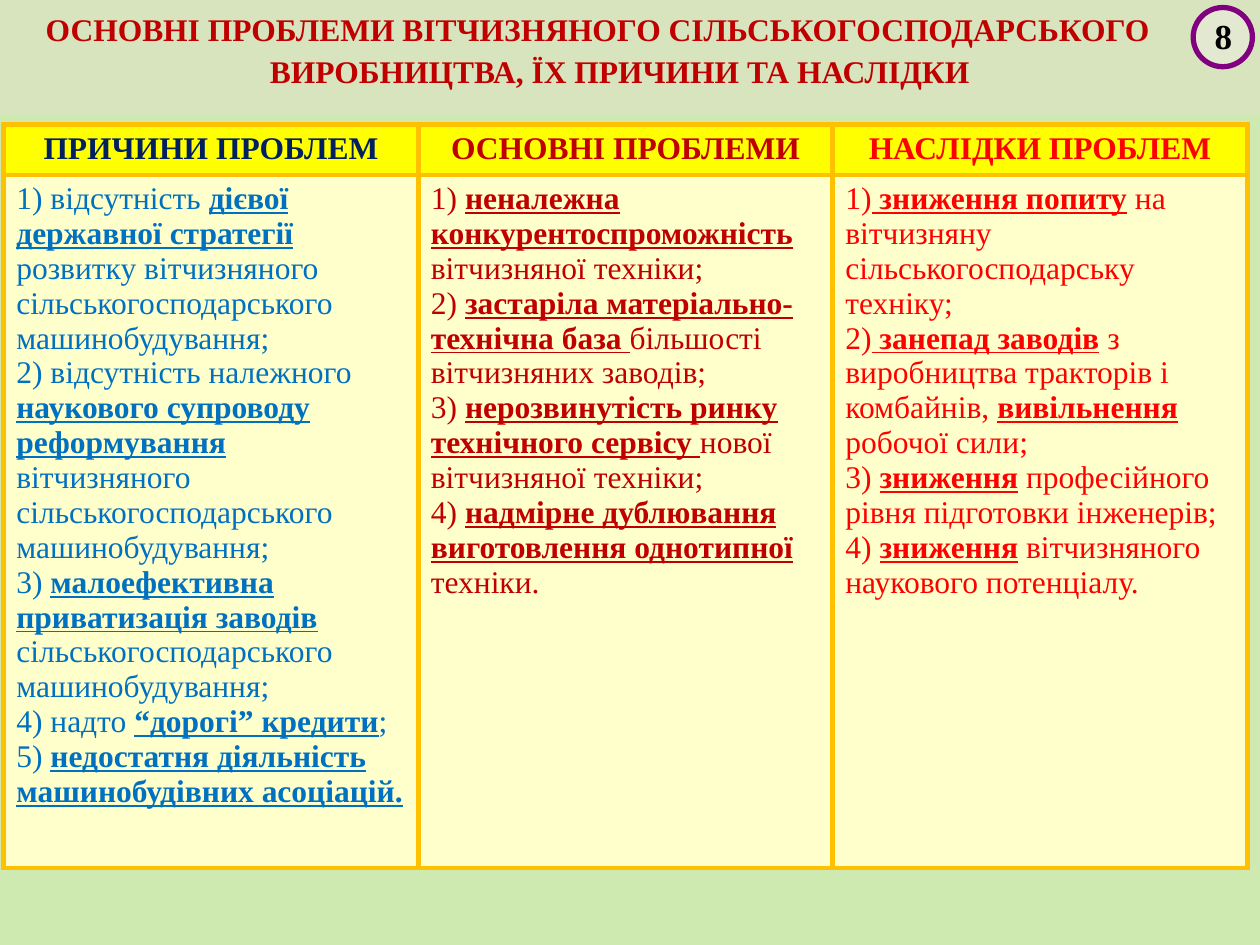
"""Build a slide on farm machinery problems, their causes and effects."""
from lxml import etree
from pptx import Presentation, util as u
from pptx.dml.color import RGBColor
from pptx.enum import shapes, text
from pptx.oxml import ns

THEME = dict(font="Times New Roman", size=18, mark=20, back="CEEAB0", band="D7E4BD",
             title="C00000", ring="800080", disc="EEECE1", ink="000000",
             head="FFFF00", body="FFFFCC", edge="FFC000", rule=3)

TITLE = ("ОСНОВНІ ПРОБЛЕМИ ВІТЧИЗНЯНОГО СІЛЬСЬКОГОСПОДАРСЬКОГО "
         "ВИРОБНИЦТВА, ЇХ ПРИЧИНИ ТА НАСЛІДКИ")
NUMBER = "8"
COLUMNS = [
    ("ПРИЧИНИ ПРОБЛЕМ", "002060", "0070C0", [
        "1) відсутність *дієвої державної стратегії *розвитку вітчизняного "
        "сільськогосподарського машинобудування;",
        "2) відсутність належного *наукового супроводу реформування *вітчизняного "
        "сільськогосподарського машинобудування;",
        "3) *малоефективна приватизація заводів *сільськогосподарського машинобудування;",
        "4) надто *“дорогі” кредити*;",
        "5) *недостатня діяльність машинобудівних асоціацій.*",
    ]),
    ("ОСНОВНІ ПРОБЛЕМИ", "C00000", "C00000", [
        "1) *неналежна конкурентоспроможність *вітчизняної техніки;",
        "2) *застаріла матеріально-технічна база *більшості вітчизняних заводів;",
        "3) *нерозвинутість ринку технічного сервісу *нової вітчизняної техніки;",
        "4) *надмірне дублювання виготовлення однотипної *техніки.",
    ]),
    ("НАСЛІДКИ ПРОБЛЕМ", "FF0000", "FF0000", [
        "1)* зниження попиту* на вітчизняну сільськогосподарську техніку;",
        "2)* занепад заводів* з виробництва тракторів і комбайнів, "
        "*вивільнення* робочої сили;",
        "3) *зниження* професійного рівня підготовки інженерів;",
        "4) *зниження* вітчизняного наукового потенціалу.",
    ]),
]


def paint(fill, color):
    fill.solid()
    fill.fore_color.rgb = RGBColor.from_string(color)


def place(*box):
    return [u.Inches(n) for n in box]


def write(para, words, color, bold=False, under=False, size=THEME["size"]):
    run = para.add_run()
    run.text = words
    font = run.font
    font.name, font.size = THEME["font"], u.Pt(size)
    font.bold, font.underline = bold, under
    font.color.rgb = RGBColor.from_string(color)


def center(frame, words, color, size=THEME["size"]):
    para = frame.paragraphs[0]
    para.alignment = text.PP_ALIGN.CENTER
    write(para, words, color, bold=True, size=size)
    return para


def add_band(slide):
    band = slide.shapes.add_shape(shapes.MSO_SHAPE.RECTANGLE, *place(0, 0, 10, 0.91))
    band.shadow.inherit = False
    paint(band.fill, THEME["band"])
    band.line.fill.background()


def add_badge(slide):
    group = slide.shapes.add_group_shape()
    disc = group.shapes.add_shape(shapes.MSO_SHAPE.OVAL, *place(9.47, 0.06, 0.47, 0.47))
    disc.shadow.inherit = False
    paint(disc.fill, THEME["disc"])
    tint = disc.element.spPr.find(ns.qn("a:solidFill"))[0]
    etree.SubElement(tint, ns.qn("a:alpha"), val="55000")
    paint(disc.line.fill, THEME["ring"])
    disc.line.width = u.Pt(THEME["rule"])
    frame = group.shapes.add_textbox(*place(9.57, 0.11, 0.28, 0.34)).text_frame
    frame.margin_left = frame.margin_right = frame.margin_top = frame.margin_bottom = 0
    frame.word_wrap = False
    frame.vertical_anchor = text.MSO_ANCHOR.MIDDLE
    center(frame, NUMBER, THEME["ink"], THEME["mark"])


def set_title(slide):
    title = slide.shapes.title
    title.left, title.top, title.width, title.height = place(0, 0, 9.49, 0.71)
    title.element.getparent().append(title.element)
    frame = title.text_frame
    frame.word_wrap = True
    frame.auto_size = text.MSO_AUTO_SIZE.NONE
    frame.vertical_anchor = text.MSO_ANCHOR.TOP
    para = center(frame, TITLE, THEME["title"])
    para.line_spacing = 1.1
    props = para._p.get_or_add_pPr()
    props.set("marL", str(u.Inches(0.35)))
    props.set("indent", str(u.Inches(-0.35)))


def style(cell, color):
    props = cell._tc.get_or_add_tcPr()
    for side in ("lnL", "lnR", "lnT", "lnB"):
        line = etree.SubElement(props, ns.qn("a:" + side), w=str(u.Pt(THEME["rule"])))
        fill = etree.SubElement(line, ns.qn("a:solidFill"))
        etree.SubElement(fill, ns.qn("a:srgbClr"), val=THEME["edge"])
    paint(cell.fill, color)


def add_grid(slide):
    count = len(COLUMNS)
    table = slide.shapes.add_table(2, count, *place(0.03, 0.99, 3.29 * count, 5.9)).table
    table.rows[0].height, table.rows[1].height = place(0.4, 5.5)
    for col, (head, dark, color, items) in enumerate(COLUMNS):
        table.columns[col].width = u.Inches(3.29)
        top, body = table.cell(0, col), table.cell(1, col)
        style(top, THEME["head"])
        style(body, THEME["body"])
        center(top.text_frame, head, dark)
        frame = body.text_frame
        for row, item in enumerate(items):
            para = frame.add_paragraph() if row else frame.paragraphs[0]
            for part, words in enumerate(item.split("*")):
                if words:
                    strong = part % 2 == 1
                    write(para, words, color, strong, strong)


def main():
    deck = Presentation()
    deck.slide_width, deck.slide_height = place(10, 7.5)
    slide = deck.slides.add_slide(deck.slide_layouts[5])
    paint(slide.background.fill, THEME["back"])
    add_band(slide)
    add_badge(slide)
    set_title(slide)
    add_grid(slide)
    deck.save("out.pptx")


if __name__ == "__main__":
    main()
